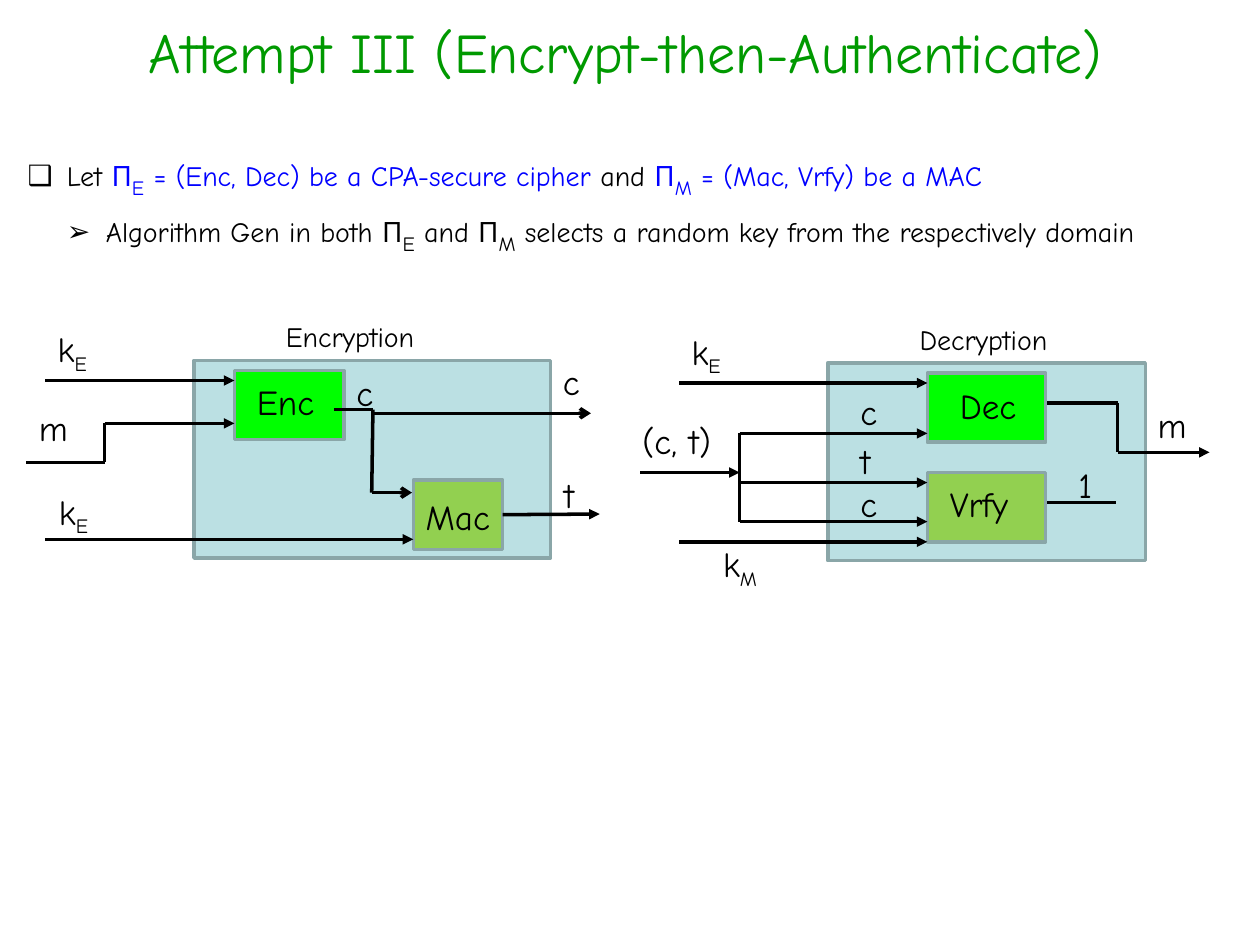
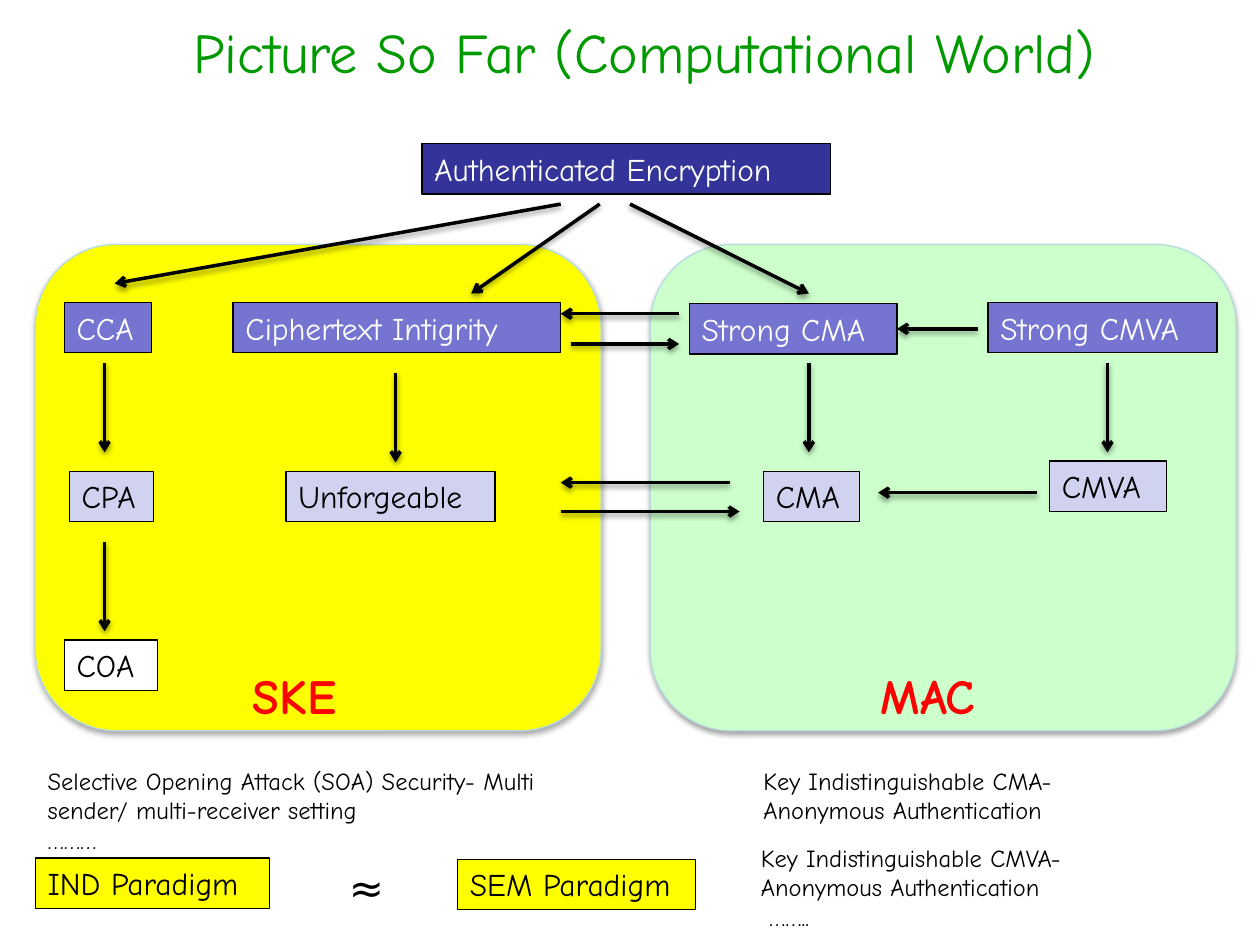
from dataclasses import dataclass
from itertools import pairwise

from lxml import etree
from pptx import Presentation
from pptx.dml.color import RGBColor
from pptx.enum.shapes import MSO_CONNECTOR as CONN, MSO_SHAPE as SHAPE
from pptx.enum.text import MSO_ANCHOR as ANCHOR, MSO_AUTO_SIZE as AUTO, PP_ALIGN as ALIGN
from pptx.oxml.ns import qn
from pptx.util import Inches, Pt

# Shared style
FONT = "Comic Neue"
BLACK, WHITE, BLUE, RED = "000000", "FFFFFF", "0000FF", "FF0000"
TITLE_GREEN, YELLOW, MINT = "009900", "FFFF00", "CCFFCC"
PANEL, PANEL_EDGE, SOFT_EDGE = "BBE0E3", "8AA6A8", "B6DCDF"
LIME, LEAF = "00FF00", "92D050"
NAVY, VIOLET, LILAC = "333399", "7575D1", "D1D1F0"
TRIANGLE, ARROW = "triangle", "arrow"
RIGHT_SIDE = 3

Point = tuple[float, float]


@dataclass
class Box:
    left: float
    top: float
    width: float
    height: float
    fill: str
    edge: str = PANEL_EDGE
    edge_width: float = 2
    shape: SHAPE = SHAPE.RECTANGLE
    shadow: int = 0


@dataclass
class Label:
    text: str
    left: float
    top: float
    width: float = 0.7
    height: float = 0.44
    size: int = 20
    sub: str = ""
    color: str = BLACK
    bold: bool = False


@dataclass
class Wire:
    points: list[Point]
    head: str = ""
    shadow: int = 0


@dataclass
class Node:
    text: str
    left: float
    top: float
    width: float
    fill: str
    color: str = BLACK


@dataclass
class Segment:
    text: str
    color: str = BLACK
    sub: bool = False


def rgb(color: str) -> RGBColor:
    return RGBColor.from_string(color)


def style_run(r, size: float, color: str, bold: bool = False, sub: bool = False) -> None:
    r.font.name = FONT
    r.font.size = Pt(size)
    r.font.bold = bold
    r.font.color.rgb = rgb(color)
    if sub:
        r._r.get_or_add_rPr().set("baseline", "-25000")


def set_shadow(sp, percent: int) -> None:
    """Replace the theme shadow by a soft one below, or by none at 0 percent."""
    effects = sp._element.spPr.find(qn("a:effectLst"))
    if effects is None:
        effects = etree.SubElement(sp._element.spPr, qn("a:effectLst"))
    if percent:
        outer = etree.SubElement(effects, qn("a:outerShdw"), blurRad=str(Pt(3.1)),
                                 dist=str(Pt(1.7)), dir="5400000", rotWithShape="0")
        color = etree.SubElement(outer, qn("a:srgbClr"), val=BLACK)
        etree.SubElement(color, qn("a:alpha"), val=str(percent * 1000))


def place(sp, left: float, top: float, width: float, height: float) -> None:
    sp.left, sp.top = Inches(left), Inches(top)
    sp.width, sp.height = Inches(width), Inches(height)


def add_title(s, text: str, left: float, width: float) -> None:
    sp = s.shapes.title
    place(sp, left, 0.09, width, 0.55)
    tf = sp.text_frame
    tf.text = text
    tf.auto_size = AUTO.NONE
    tf.vertical_anchor = ANCHOR.TOP
    tf.paragraphs[0].alignment = ALIGN.CENTER
    style_run(tf.paragraphs[0].runs[0], 32, TITLE_GREEN)


def add_box(s, box: Box):
    sp = s.shapes.add_shape(box.shape, Inches(box.left), Inches(box.top),
                            Inches(box.width), Inches(box.height))
    sp.shadow.inherit = False
    sp.fill.solid()
    sp.fill.fore_color.rgb = rgb(box.fill)
    sp.line.color.rgb = rgb(box.edge)
    sp.line.width = Pt(box.edge_width)
    set_shadow(sp, box.shadow)
    return sp


def add_node(s, node: Node):
    sp = add_box(s, Box(node.left, node.top, node.width, 0.4, node.fill, BLACK, 0.75))
    tf = sp.text_frame
    tf.text = node.text
    tf.word_wrap = True
    tf.vertical_anchor = ANCHOR.TOP
    tf.paragraphs[0].alignment = ALIGN.LEFT
    style_run(tf.paragraphs[0].runs[0], 18, node.color)
    return sp


def add_label(s, label: Label) -> None:
    tb = s.shapes.add_textbox(Inches(label.left), Inches(label.top),
                              Inches(label.width), Inches(label.height))
    tf = tb.text_frame
    tf.word_wrap = True
    tf.text = label.text
    for p in tf.paragraphs:
        for r in p.runs:
            style_run(r, label.size, label.color, label.bold)
    if label.sub:
        r = tf.paragraphs[0].add_run()
        r.text = label.sub
        style_run(r, label.size, label.color, sub=True)


def add_wire(s, wire: Wire):
    """Draw a line through all points, with the head on the last stretch."""
    for (x1, y1), (x2, y2) in pairwise(wire.points):
        cn = s.shapes.add_connector(CONN.STRAIGHT, Inches(x1), Inches(y1),
                                    Inches(x2), Inches(y2))
        cn.line.color.rgb = rgb(BLACK)
        cn.line.width = Pt(2)
        set_shadow(cn, wire.shadow)
    if wire.head:
        etree.SubElement(cn.line._get_or_add_ln(), qn("a:tailEnd"), type=wire.head)
    return cn


def add_bullets(s, items: list[tuple[str, list[Segment]]]) -> None:
    """Fill the body; each item is indented one step more than the one before."""
    body = s.placeholders[1]
    place(body, 0.12, 1.2, 9.7, 0.9)
    tf = body.text_frame
    tf.auto_size = AUTO.NONE
    for i, (bullet, segments) in enumerate(items):
        p = tf.add_paragraph() if i else tf.paragraphs[0]
        p.line_spacing = Pt(24)
        p.space_before = Pt(8 * i)
        pPr = p._p.get_or_add_pPr()
        pPr.set("marL", str(Inches(0.31 * (i + 1))))
        pPr.set("indent", str(-Inches(0.31)))
        etree.SubElement(pPr, qn("a:buFont"), typeface="Arial")
        etree.SubElement(pPr, qn("a:buChar"), char=bullet)
        for seg in segments:
            r = p.add_run()
            r.text = seg.text
            style_run(r, 20 if seg.sub else 16, seg.color, sub=seg.sub)


def build_encrypt_then_authenticate(prs) -> None:
    s = prs.slides.add_slide(prs.slide_layouts[1])
    add_title(s, "Attempt III (Encrypt-then-Authenticate)", 0.2, 9.53)
    add_bullets(s, [
        ("❑", [Segment("Let "), Segment("Π", BLUE), Segment("E", BLUE, True),
               Segment(" = (Enc, Dec) be a CPA-secure cipher ", BLUE), Segment("and "),
               Segment("Π", BLUE), Segment("M", BLUE, True),
               Segment(" = (Mac, Vrfy) be a MAC", BLUE)]),
        ("➢", [Segment("Algorithm Gen in both Π"), Segment("E", sub=True),
               Segment(" and Π"), Segment("M", sub=True),
               Segment(" selects a random key from the respectively domain")]),
    ])

    # Panels and the algorithms inside them
    add_box(s, Box(1.54, 2.86, 2.83, 1.57, PANEL))
    add_box(s, Box(6.57, 2.88, 2.52, 1.57, PANEL))
    add_box(s, Box(1.86, 2.94, 0.87, 0.55, LIME))
    mac = add_box(s, Box(3.28, 3.81, 0.71, 0.55, LEAF))
    add_box(s, Box(7.36, 2.96, 0.94, 0.55, LIME))
    add_box(s, Box(7.36, 3.75, 0.94, 0.55, LEAF))

    # Encryption wires
    for wire in [
        Wire([(0.36, 3.02), (1.86, 3.02)], TRIANGLE),
        Wire([(0.21, 3.67), (0.83, 3.67), (0.83, 3.36), (1.86, 3.36)], TRIANGLE),
        Wire([(0.36, 4.28), (3.28, 4.28)], TRIANGLE),
        Wire([(2.65, 3.25), (2.96, 3.25), (2.95, 3.91), (3.27, 3.91)], ARROW),
        Wire([(2.95, 3.28), (4.69, 3.28)], ARROW),
    ]:
        add_wire(s, wire)
    tag_wire = add_wire(s, Wire([(3.99, 4.08), (4.76, 4.08)], TRIANGLE))
    tag_wire.begin_connect(mac, RIGHT_SIDE)

    # Decryption wires
    for wire in [
        Wire([(5.39, 3.04), (7.36, 3.04)], TRIANGLE),
        Wire([(5.08, 3.75), (5.87, 3.75)], TRIANGLE),
        Wire([(5.87, 3.44), (5.87, 4.14)]),
        *(Wire([(5.87, y), (7.36, y)], TRIANGLE) for y in (3.44, 3.83, 4.14)),
        Wire([(5.39, 4.3), (7.36, 4.3)], TRIANGLE),
        Wire([(8.31, 3.2), (8.87, 3.2), (8.87, 3.59), (9.6, 3.59)], TRIANGLE),
        Wire([(8.31, 3.99), (8.86, 3.99)]),
    ]:
        add_wire(s, wire)

    # Labels
    for label in [
        Label("Encryption", 2.17, 2.49, 1.42, 0.37, 16),
        Label("k", 0.36, 2.55, sub="E"), Label("m", 0.21, 3.18),
        Label("k", 0.37, 3.84, sub="E"), Label("Enc", 1.94, 2.97),
        Label("Mac", 3.28, 3.88, 0.9), Label("c", 2.73, 2.9),
        Label("c", 4.37, 2.81), Label("t", 4.38, 3.71),
        Label("Decryption", 7.2, 2.51, 1.42, 0.37, 16),
        Label("k", 5.39, 2.57, sub="E"), Label("(c, t)", 5, 3.28, 1.1),
        Label("k", 5.64, 4.26, sub="M"), Label("Dec", 7.52, 3),
        Label("Vrfy", 7.44, 3.78, 1), Label("c", 6.73, 3.05),
        Label("t", 6.73, 3.44), Label("c", 6.73, 3.78),
        Label("1", 8.46, 3.63), Label("m", 9.09, 3.15),
    ]:
        add_label(s, label)


def build_picture_so_far(prs) -> None:
    s = prs.slides.add_slide(prs.slide_layouts[5])
    add_title(s, "Picture So Far (Computational World)", 0.23, 9.77)

    # MAC and SKE worlds
    for left, width, fill in [(5.16, 4.65, MINT), (0.28, 4.49, YELLOW)]:
        add_box(s, Box(left, 1.94, width, 3.86, fill, SOFT_EDGE, 0.75,
                       SHAPE.ROUNDED_RECTANGLE, 35))

    # Security notions
    nodes = {node.text: add_node(s, node) for node in [
        Node("Authenticated Encryption", 3.35, 1.14, 3.24, NAVY, WHITE),
        Node("CCA", 0.51, 2.4, 0.69, VIOLET, WHITE),
        Node("Ciphertext Intigrity", 1.85, 2.4, 2.6, VIOLET, WHITE),
        Node("Strong CMA", 5.47, 2.41, 1.65, VIOLET, WHITE),
        Node("Strong CMVA", 7.84, 2.4, 1.82, VIOLET, WHITE),
        Node("CPA", 0.55, 3.74, 0.67, LILAC),
        Node("Unforgeable", 2.27, 3.74, 1.66, LILAC),
        Node("CMA", 6.06, 3.74, 0.76, LILAC),
        Node("CMVA", 8.33, 3.66, 0.93, LILAC),
        Node("COA", 0.51, 5.08, 0.74, WHITE),
        Node("IND Paradigm", 0.28, 6.81, 1.86, YELLOW),
        Node("SEM Paradigm", 3.63, 6.82, 1.89, YELLOW),
    ]}

    # Implications: from the top, downwards, then across
    fan = [((4.45, 1.62), (0.91, 2.25)), ((4.76, 1.62), (3.74, 2.33)),
           ((5, 1.62), (6.42, 2.33))]
    down = [((x, y), (x, y + 0.71)) for x, y in
            [(0.83, 2.88), (3.14, 2.96), (6.42, 2.88), (8.79, 2.88), (0.83, 4.3)]]
    across = [((x1, y), (x2, y)) for x1, x2, y in
              [(5.39, 4.45, 2.49), (4.53, 5.39, 2.73), (5.79, 4.45, 3.83),
               (4.45, 5.87, 4.06), (8.23, 6.97, 3.91)]]
    for start, end in fan + down + across:
        add_wire(s, Wire([start, end], ARROW, 38))
    cmva_to_cma = add_wire(s, Wire([(7.76, 2.61), (7.12, 2.61)], ARROW, 38))
    cmva_to_cma.end_connect(nodes["Strong CMA"], RIGHT_SIDE)

    # World names and notes
    for label in [
        Label("SKE", 1.91, 5.23, 0.96, 0.57, 28, color=RED, bold=True),
        Label("MAC", 6.89, 5.23, 1.08, 0.57, 28, color=RED, bold=True),
        Label("≈", 2.67, 6.79, 0.5, 0.5, 24),
        Label("Selective Opening Attack (SOA) Security- Multi sender/ "
              "multi-receiver setting\n………", 0.28, 6.03, 4.49, 0.81, 14),
        Label("Key Indistinguishable CMA-\nAnonymous Authentication",
              5.96, 6.03, 3.76, 0.57, 14),
        Label("Key Indistinguishable CMVA-Anonymous Authentication\n ……..",
              5.94, 6.64, 3.39, 0.81, 14),
    ]:
        add_label(s, label)


def main() -> None:
    prs = Presentation()
    prs.slide_width, prs.slide_height = Inches(10), Inches(7.5)
    build_encrypt_then_authenticate(prs)
    build_picture_so_far(prs)
    prs.save("out.pptx")


if __name__ == "__main__":
    main()
